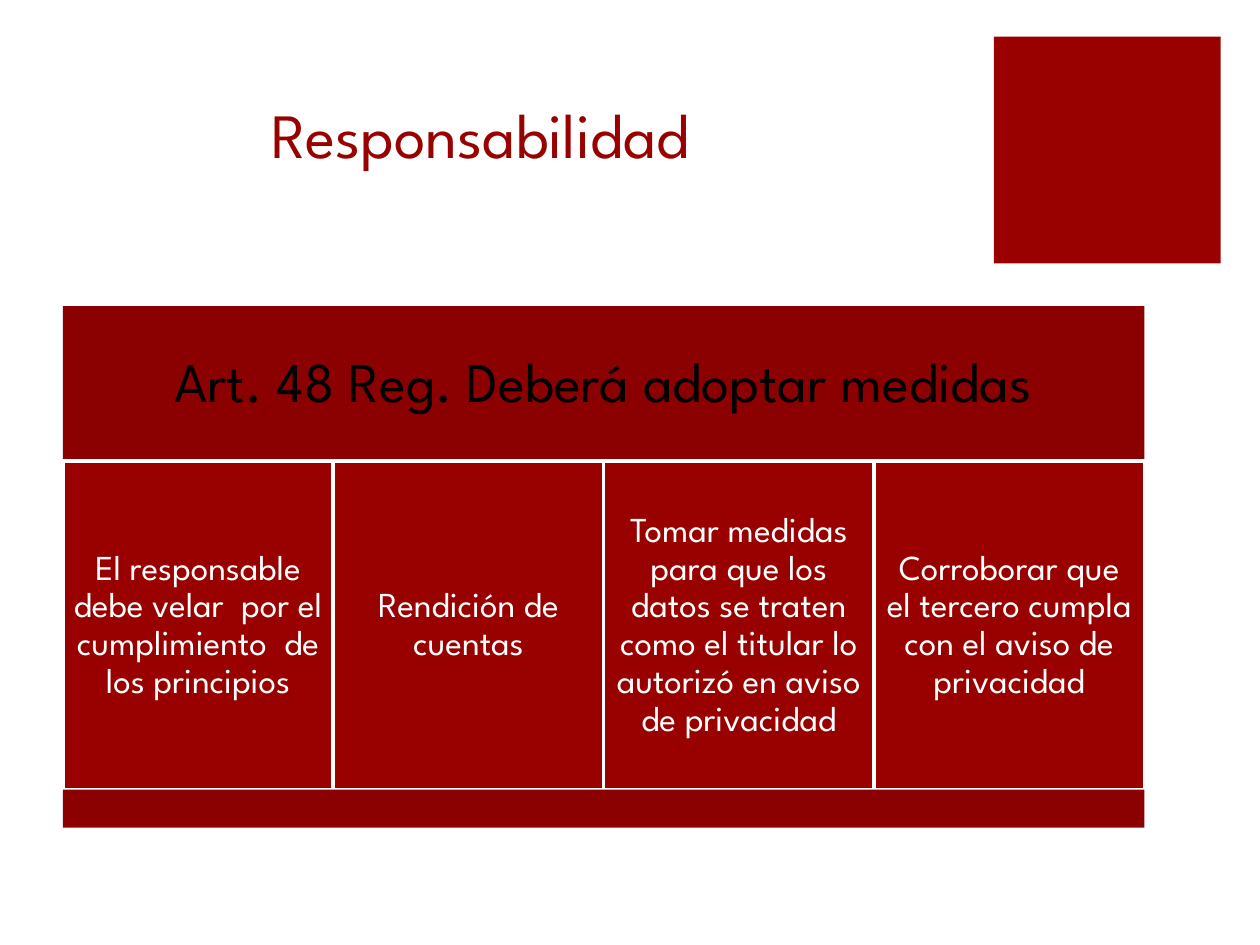
from pptx import Presentation
from pptx.dml.color import RGBColor
from pptx.enum import shapes, text
from pptx.util import Pt

FONT = "League Spartan"
COLORS = {"red": "990000", "dark_red": "8B0000", "white": "FFFFFF", "black": "000000"}
MEASURES = [
    "El responsable debe velar  por el cumplimiento  de los principios",
    "Rendición de cuentas",
    "Tomar medidas para que los datos se traten como el titular lo autorizó en aviso de privacidad",
    "Corroborar que el tercero cumpla con el aviso de privacidad",
]


def color(name):
    return RGBColor.from_string(COLORS[name])


def write(shape, wording, size, ink, inset, spacing=None, anchor=text.MSO_ANCHOR.MIDDLE):
    frame = shape.text_frame
    frame.word_wrap = True
    frame.vertical_anchor = anchor
    frame.margin_left = frame.margin_right = Pt(inset)
    frame.margin_top = frame.margin_bottom = Pt(inset)
    frame.text = wording
    paragraph = frame.paragraphs[0]
    paragraph.alignment = text.PP_ALIGN.CENTER
    if spacing:
        paragraph.line_spacing = spacing
    font = paragraph.runs[0].font
    font.name, font.size = FONT, Pt(size)
    font.color.rgb = color(ink)


def add_block(slide, left, top, width, height, fill, outline=None):
    block = slide.shapes.add_shape(
        shapes.MSO_SHAPE.RECTANGLE, Pt(left), Pt(top), Pt(width), Pt(height))
    block.shadow.inherit = False
    block.fill.solid()
    block.fill.fore_color.rgb = color(fill)
    if outline:
        block.line.color.rgb = color(outline)
        block.line.width = Pt(2)
    else:
        block.line.fill.background()
    return block


def add_title(slide, left, top, width, height):
    title = slide.shapes.add_textbox(Pt(left), Pt(top), Pt(width), Pt(height))
    write(title, "Responsabilidad", 36, "red", 4, anchor=text.MSO_ANCHOR.BOTTOM)


def add_measures(slide, left, top, width, height):
    """Heading band, a row of equal cells and a closing band."""
    heading_height = height * 0.3
    row_top = top + height * 0.297
    row_height = height * 0.63
    footer_top = row_top + row_height
    cell_width = width / len(MEASURES)

    heading = add_block(slide, left, top, width, heading_height, "dark_red")
    write(heading, "Art. 48 Reg. Deberá adoptar medidas", 32, "black", 9.6, 0.9)
    for column, measure in enumerate(MEASURES):
        cell = add_block(slide, left + column * cell_width, row_top,
                         cell_width, row_height, "red", "white")
        write(cell, measure, 20, "white", 6, 0.9)
    add_block(slide, left, footer_top, width, top + height - footer_top, "dark_red")


def main():
    deck = Presentation()
    deck.slide_width, deck.slide_height = Pt(720), Pt(540)
    slide = deck.slides.add_slide(deck.slide_layouts[6])
    add_block(slide, 568, 21, 129.6, 129.6, "red")
    add_measures(slide, 36, 175, 618, 298)
    add_title(slide, 18, 12, 513, 90)
    deck.save("out.pptx")


if __name__ == "__main__":
    main()
